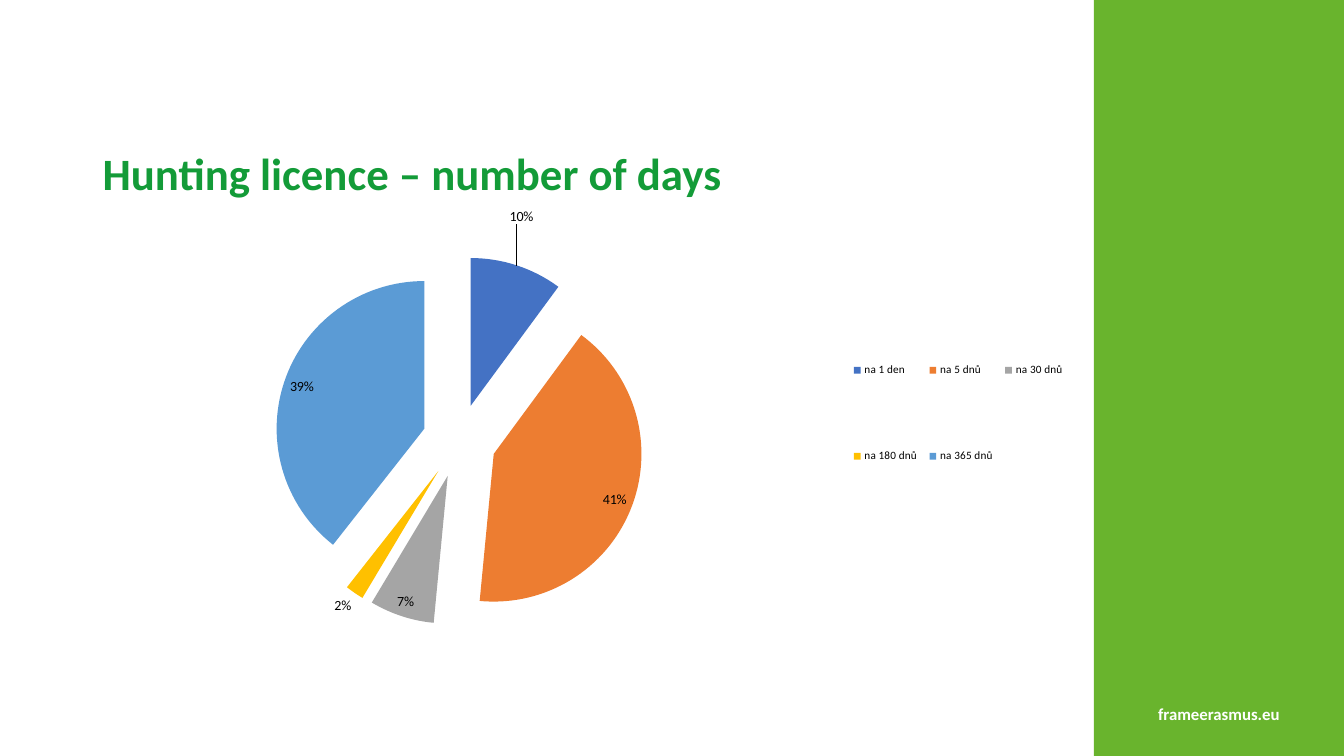
from lxml import etree
from pptx import Presentation
from pptx.chart.data import CategoryChartData
from pptx.dml.color import RGBColor
from pptx.enum.chart import XL_CHART_TYPE, XL_LABEL_POSITION, XL_LEGEND_POSITION
from pptx.enum.shapes import MSO_SHAPE
from pptx.enum.text import MSO_ANCHOR, PP_ALIGN
from pptx.oxml.ns import qn
from pptx.util import Emu, Pt

PIE = XL_CHART_TYPE.PIE
BEST_FIT = XL_LABEL_POSITION.BEST_FIT
RIGHT = XL_LEGEND_POSITION.RIGHT
RECTANGLE = MSO_SHAPE.RECTANGLE
TOP, MIDDLE = MSO_ANCHOR.TOP, MSO_ANCHOR.MIDDLE
LEFT, CENTER = PP_ALIGN.LEFT, PP_ALIGN.CENTER

EMU_PER_PX = 9144
SLIDE_W, SLIDE_H = 1333, 750
BAND_W = 248
FONT = "Calibri"
COLORS = {
    "band": "69B42D", "title": "139B38", "white": "FFFFFF", "black": "000000",
    "blue": "4472C4", "orange": "ED7D31", "grey": "A5A5A5",
    "yellow": "FFC000", "sky": "5B9BD5",
}
LICENCES = [
    ("na 1 den", 10, "blue"),
    ("na 5 dnů", 41, "orange"),
    ("na 30 dnů", 7, "grey"),
    ("na 180 dnů", 2, "yellow"),
    ("na 365 dnů", 39, "sky"),
]


def px(*lengths):
    return [Emu(length * EMU_PER_PX) for length in lengths]


def color(name):
    return RGBColor.from_string(COLORS[name])


def style_font(font, size, color_name, bold=False):
    for key, value in {"name": FONT, "size": Pt(size), "bold": bold}.items():
        setattr(font, key, value)
    font.color.rgb = color(color_name)


def add_text(slide, box, text, size, color_name, align, anchor, spacing=1.0):
    frame = slide.shapes.add_textbox(*px(*box)).text_frame
    frame.word_wrap = True
    frame.vertical_anchor = anchor
    line = frame.paragraphs[0]
    line.text = text
    line.alignment = align
    line.line_spacing = spacing
    style_font(line.runs[0].font, size, color_name, bold=True)


def add_side_band(slide, box):
    left, top, width, height = box
    band = slide.shapes.add_shape(RECTANGLE, *px(*box))
    band.shadow.inherit = False
    band.fill.solid()
    band.fill.fore_color.rgb = color("band")
    band.line.fill.background()
    add_text(slide, (left, top + height - 57, width, 30), "frameerasmus.eu",
             12, "white", CENTER, TOP)


def manual_layout(values):
    """Build a c:layout element from child names and their values."""
    layout = etree.Element(qn("c:layout"))
    manual = etree.SubElement(layout, qn("c:manualLayout"))
    for name, value in values.items():
        etree.SubElement(manual, qn(f"c:{name}")).set("val", str(value))
    return layout


def frame_layout(x, y, w, h, **target):
    return manual_layout({**target, "xMode": "edge", "yMode": "edge",
                          "x": x, "y": y, "w": w, "h": h})


def set_layout(parent, layout, after=None):
    for existing in parent.findall(qn("c:layout")):
        parent.remove(existing)
    if after is None:
        parent.insert(0, layout)
    else:
        parent.find(qn(after)).addnext(layout)


def add_licence_pie(slide, box):
    data = CategoryChartData()
    data.categories = [name for name, _, _ in LICENCES]
    data.add_series("Series 1", [share for _, share, _ in LICENCES])
    chart = slide.shapes.add_chart(PIE, *px(*box), data).chart
    chart.has_title = False
    style_font(chart.font, 10, "black")

    chart.has_legend = True
    legend = chart.legend
    legend.position = RIGHT
    legend.include_in_layout = False
    style_font(legend.font, 8, "black")
    set_layout(legend._element, frame_layout(0.69, 0.23, 0.25, 0.49),
               after="c:legendPos")

    plot = chart.plots[0]
    plot.vary_by_categories = True
    set_layout(chart._chartSpace.chart.plotArea,
               frame_layout(0.06, 0.16, 0.41, 0.74, layoutTarget="inner"))

    series = plot.series[0]
    explosion = etree.Element(qn("c:explosion"))
    explosion.set("val", "25")
    series._element.find(qn("c:tx")).addnext(explosion)
    for index, (_, _, color_name) in enumerate(LICENCES):
        fill = series.points[index].format.fill
        fill.solid()
        fill.fore_color.rgb = color(color_name)

    labels = series.data_labels
    for key, value in {"show_percentage": True, "show_value": False,
                       "number_format": "0%", "number_format_is_linked": False,
                       "position": BEST_FIT}.items():
        setattr(labels, key, value)
    style_font(labels.font, 10, "black")

    one_day = series.points[0].data_label
    one_day.position = BEST_FIT
    label = labels._element.find(qn("c:dLbl"))
    label.find(qn("c:showVal")).set("val", "0")
    label.find(qn("c:showPercent")).set("val", "1")
    set_layout(label, manual_layout({"x": -0.01, "y": -0.07}), after="c:idx")


def build_slide(slide):
    add_side_band(slide, (SLIDE_W - BAND_W, 0, BAND_W, SLIDE_H))
    add_text(slide, (92, 126, 956, 97), "Hunting licence – number of days",
             32, "title", LEFT, MIDDLE, spacing=0.9)
    add_licence_pie(slide, (217, 175, 900, 495))


def main():
    deck = Presentation()
    deck.slide_width, deck.slide_height = px(SLIDE_W, SLIDE_H)
    build_slide(deck.slides.add_slide(deck.slide_layouts[6]))
    deck.save("out.pptx")


if __name__ == "__main__":
    main()
